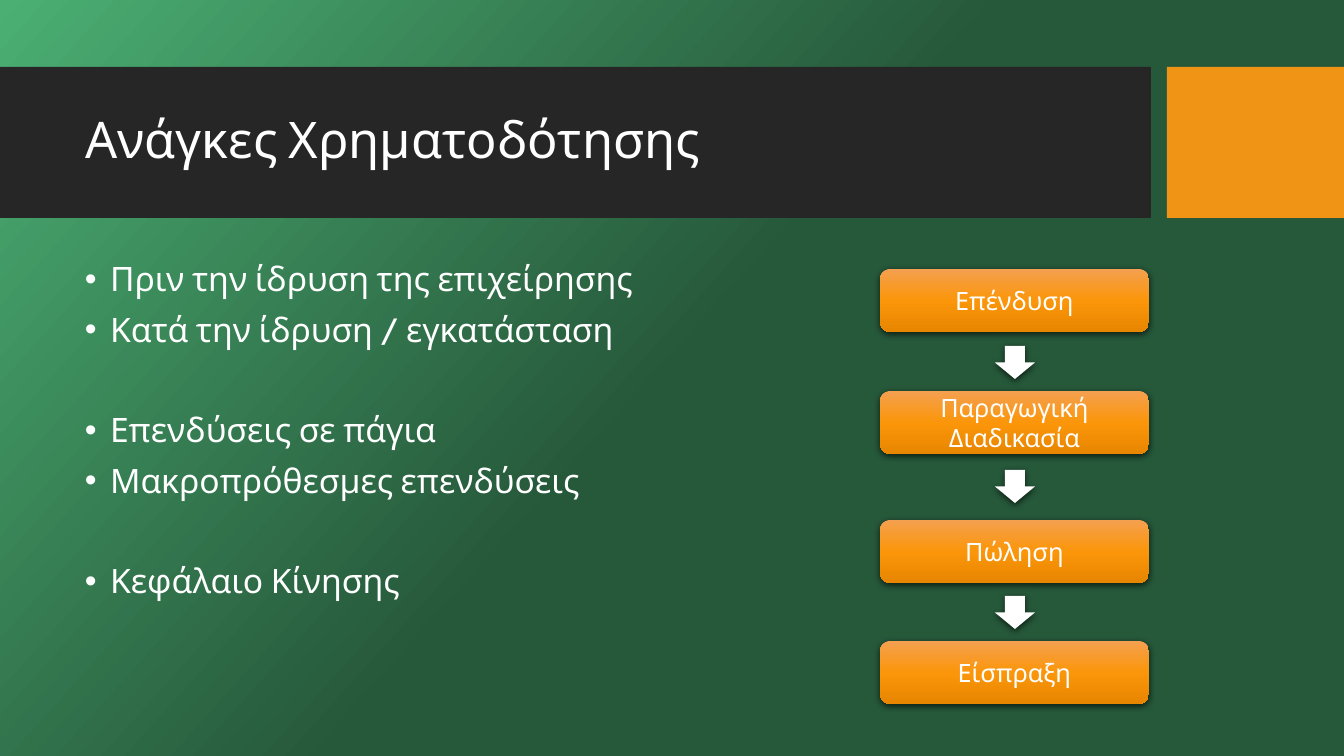
from dataclasses import dataclass

from lxml.etree import SubElement
from pptx import Presentation
from pptx.dml.color import RGBColor as Color
from pptx.enum.shapes import MSO_SHAPE as Shape
from pptx.enum.text import MSO_ANCHOR as Anchor, MSO_AUTO_SIZE as AutoSize, PP_ALIGN as Align
from pptx.oxml.ns import qn
from pptx.util import Inches, Pt

PX = Inches(1) / 100.8


@dataclass(frozen=True)
class Theme:
    font: str = "Cabin"
    title_size: int = 36
    body_size: int = 24
    node_size: int = 18
    white: str = "FFFFFF"
    band: str = "262626"
    accent: str = "F09415"
    shadow: str = "000000"
    page_stops: tuple = ((0, "4BAF73"), (50, "26583A"), (100, "26583A"))
    node_stops: tuple = ((0, "F4A050"), (50, "FB960A"), (100, "E88600"))


THEME = Theme()

BULLET_GROUPS = [
    ["Πριν την ίδρυση της επιχείρησης", "Κατά την ίδρυση / εγκατάσταση"],
    ["Επενδύσεις σε πάγια", "Μακροπρόθεσμες επενδύσεις"],
    ["Κεφάλαιο Κίνησης"],
]
CYCLE_STEPS = [
    ("Επένδυση", 269),
    ("Παραγωγική Διαδικασία", 391),
    ("Πώληση", 520),
    ("Είσπραξη", 641),
]
ARROW_TOPS = [346, 470, 596]


def px(*lengths):
    return [round(length * PX) for length in lengths]


def style_font(para, size):
    para.font.name = THEME.font
    para.font.size = Pt(size)
    para.font.color.rgb = Color.from_string(THEME.white)


def set_gradient(fill, parent, stops, angle):
    """Give a fill, whose XML lies under parent, any number of colour stops."""
    fill.gradient()
    gradient = parent.find(".//" + qn("a:gradFill"))
    for child in list(gradient):
        gradient.remove(child)
    stop_list = SubElement(gradient, qn("a:gsLst"))
    for position, colour in stops:
        stop = SubElement(stop_list, qn("a:gs"), pos=str(position * 1000))
        SubElement(stop, qn("a:srgbClr"), val=colour)
    SubElement(gradient, qn("a:lin"), ang=str(angle * 60000), scaled="0")


def add_shadow(shape):
    effects = shape._element.spPr.find(qn("a:effectLst"))
    shadow = SubElement(effects, qn("a:outerShdw"), blurRad=str(Pt(4.5)),
                        dist=str(Pt(1.5)), dir="5400000", rotWithShape="0")
    colour = SubElement(shadow, qn("a:srgbClr"), val=THEME.shadow)
    SubElement(colour, qn("a:alpha"), val="63000")


def add_plain_shape(page, kind, place, colour):
    shape = page.shapes.add_shape(kind, *px(*place))
    shape.shadow.inherit = False
    shape.line.fill.background()
    shape.fill.solid()
    shape.fill.fore_color.rgb = Color.from_string(colour)
    return shape


def place_title(page, text):
    title = page.shapes.title
    title.left, title.top, title.width, title.height = px(75, 83, 1059, 119)
    frame = title.text_frame
    frame.text = text
    frame.auto_size = AutoSize.NONE
    frame.vertical_anchor = Anchor.MIDDLE
    para = frame.paragraphs[0]
    para.alignment = Align.LEFT
    para.line_spacing = 0.9
    style_font(para, THEME.title_size)


def add_bullet(para):
    indent = Inches(0.25)
    properties = para._p.get_or_add_pPr()
    properties.set("marL", str(indent))
    properties.set("indent", str(-indent))
    SubElement(properties, qn("a:buFont"), typeface="Arial")
    SubElement(properties, qn("a:buChar"), char="•")


def add_bullet_groups(page, groups):
    """List the bullets in one box, with a line's height between groups."""
    frame = page.shapes.add_textbox(*px(75, 258, 1059, 397)).text_frame
    frame.word_wrap = True
    for group_index, group in enumerate(groups):
        for line_index, text in enumerate(group):
            first = group_index == line_index == 0
            para = frame.paragraphs[0] if first else frame.add_paragraph()
            para.text = text
            add_bullet(para)
            para.line_spacing = 0.9
            if not first:
                para.space_before = Pt(10 if line_index else 46)
            style_font(para, THEME.body_size)


def add_step(page, text, top):
    box = add_plain_shape(page, Shape.ROUNDED_RECTANGLE, (880, top, 269, 63), THEME.accent)
    set_gradient(box.fill, box._element.spPr, THEME.node_stops, 90)
    add_shadow(box)
    frame = box.text_frame
    frame.text = text
    frame.word_wrap = True
    frame.vertical_anchor = Anchor.MIDDLE
    para = frame.paragraphs[0]
    para.alignment = Align.CENTER
    style_font(para, THEME.node_size)


def add_down_arrow(page, top):
    add_shadow(add_plain_shape(page, Shape.DOWN_ARROW, (995, top, 40, 33), THEME.white))


def send_to_back(page, shape):
    page.shapes._spTree.insert(2, shape._element)


def main():
    deck = Presentation()
    deck.slide_width, deck.slide_height = px(1344, 756)
    page = deck.slides.add_slide(deck.slide_layouts.get_by_name("Title Only"))
    set_gradient(page.background.fill, page._element, THEME.page_stops, 42)

    for left, width, colour in ((0, 1151, THEME.band), (1167, 177, THEME.accent)):
        band = add_plain_shape(page, Shape.RECTANGLE, (left, 67, width, 151), colour)
        send_to_back(page, band)
    place_title(page, "Ανάγκες Χρηματοδότησης")
    add_bullet_groups(page, BULLET_GROUPS)
    for text, top in CYCLE_STEPS:
        add_step(page, text, top)
    for top in ARROW_TOPS:
        add_down_arrow(page, top)
    deck.save("out.pptx")


if __name__ == "__main__":
    main()
